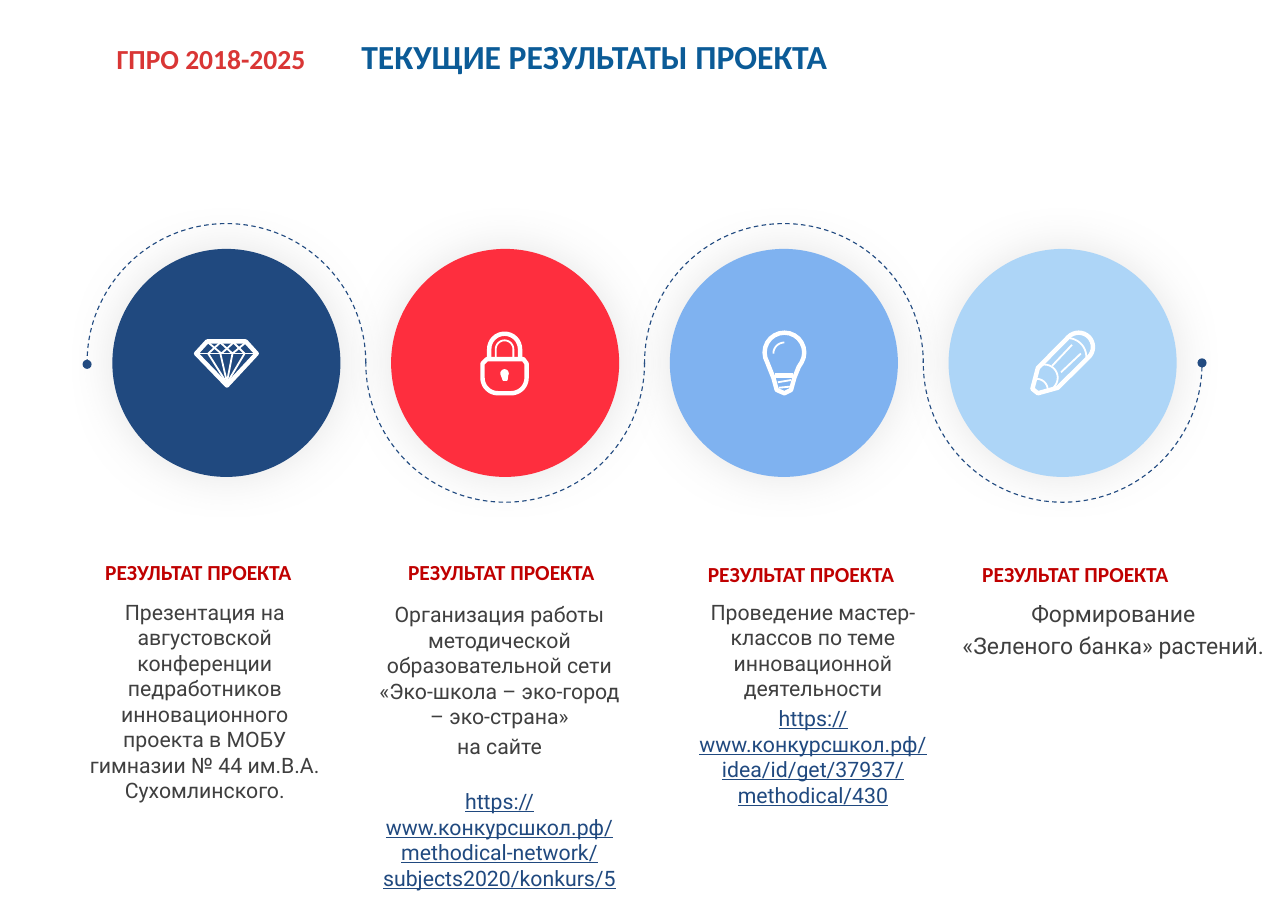
"""Build the slide of current project results."""
from dataclasses import dataclass
from math import cos, radians, sin

from lxml import etree
from pptx import Presentation
from pptx.dml.color import RGBColor
from pptx.enum.dml import MSO_LINE
from pptx.enum.shapes import MSO_SHAPE
from pptx.enum.text import MSO_ANCHOR, MSO_AUTO_SIZE, PP_ALIGN
from pptx.oxml.ns import qn
from pptx.util import Inches, Pt

ARC, OVAL = MSO_SHAPE.ARC, MSO_SHAPE.OVAL
DASH = MSO_LINE.DASH
LEFT, CENTER = PP_ALIGN.LEFT, PP_ALIGN.CENTER
TOP, MIDDLE = MSO_ANCHOR.TOP, MSO_ANCHOR.MIDDLE
GROW = MSO_AUTO_SIZE.SHAPE_TO_FIT_TEXT

WHITE = RGBColor(0xFF, 0xFF, 0xFF)
GREY = RGBColor(0x3F, 0x3F, 0x3F)
NAVY = RGBColor(0x20, 0x49, 0x7F)
WAVE = RGBColor(0x1D, 0x47, 0x7F)
RED = RGBColor(0xFE, 0x2E, 0x3E)
BLUE = RGBColor(0x7F, 0xB2, 0xF0)
PALE = RGBColor(0xAD, 0xD5, 0xF7)
CRIMSON = RGBColor(0xC0, 0x00, 0x00)
TAG = RGBColor(0xD9, 0x36, 0x35)
TITLE = RGBColor(0x0B, 0x5B, 0x97)

ARC_LEFT, ARC_TOP, ARC_SIZE = 0.79, 2.03, 2.53
DISC_SIZE = 2.07
INSET = (ARC_SIZE - DISC_SIZE) / 2
THICK, THIN = 2.9, 1.2

Box = tuple[float, float, float, float]
Points = list[tuple[float, float]]


@dataclass
class Line:
    """One paragraph of text."""
    text: str
    size: float
    color: RGBColor
    face: str = "Calibri"
    bold: bool = False
    link: bool = False
    before: float = 0
    indent: float = 0


@dataclass
class Stroke:
    """One white line of an icon."""
    points: Points
    width: float = THIN
    closed: bool = False
    solid: bool = False


@dataclass
class Result:
    """One column: disc, icon, heading and body."""
    color: RGBColor
    icon: list[Stroke]
    head: tuple[float, float]
    body: Box
    lines: list[Line]


def curve(x: float, y: float, r: float, start: int, end: int) -> Points:
    """Return points along a circle, clockwise from start to end."""
    turns = [radians(start + (end - start) * i / 16) for i in range(17)]
    return [(x + r * cos(t), y + r * sin(t)) for t in turns]


def body(text: str, size: float = 13.9, before: float = 0, link: bool = False) -> Line:
    """Return a paragraph in the style of the column bodies."""
    return Line(text, size, NAVY if link else GREY, "Roboto", link=link, before=before, indent=0.05)


GEM = [
    Stroke([(1.78, 3.21), (1.88, 3.1), (2.23, 3.1), (2.33, 3.21), (2.06, 3.5)], THICK, True),
    Stroke([(1.8, 3.21), (2.31, 3.21)]),
    Stroke([(1.89, 3.21), (2.06, 3.48), (2.22, 3.21)]),
    Stroke([(2, 3.21), (2.06, 3.47), (2.11, 3.21)]),
    Stroke([(1.89, 3.11), (2.01, 3.21), (2.12, 3.11), (2.22, 3.21)]),
    Stroke([(1.89, 3.21), (2, 3.11), (2.11, 3.21), (2.23, 3.11)]),
]
LOCK = [
    Stroke([(4.38, 3.3), (4.42, 3.26), (4.75, 3.26), (4.78, 3.3)]
           + curve(4.64, 3.43, 0.14, 0, 90) + curve(4.52, 3.43, 0.14, 90, 180), THICK, True),
    Stroke([(4.44, 3.26), *curve(4.58, 3.17, 0.14, 180, 360), (4.72, 3.26)], THICK),
    Stroke([(4.5, 3.25), *curve(4.58, 3.17, 0.08, 180, 360), (4.66, 3.25)]),
    Stroke([*curve(4.58, 3.39, 0.03, 150, 390), (4.6, 3.45), (4.57, 3.45)], THIN, True, True),
]
BULB = [
    Stroke([*curve(7.12, 3.2, 0.18, 150, 390), (7.25, 3.33), (7.21, 3.43), (7.18, 3.54),
            (7.12, 3.57), (7.05, 3.54), (7.02, 3.43), (6.98, 3.33)], THICK, True),
    Stroke([(7.03, 3.41), (7.2, 3.41)], THICK),
    Stroke([(7.06, 3.47), (7.18, 3.45)]),
    Stroke([(7.07, 3.52), (7.17, 3.51)]),
    Stroke(curve(7.12, 3.21, 0.1, 180, 270)),
]
PENCIL = [
    Stroke([(9.37, 3.53), (9.42, 3.34), *curve(9.79, 3.15, 0.13, 225, 405),
            (9.6, 3.52), (9.42, 3.57)], THICK, True),
    Stroke([(9.55, 3.32), (9.73, 3.13)]),
    Stroke([(9.63, 3.38), (9.81, 3.21)]),
    Stroke(curve(9.69, 3.24, 0.17, -90, 0)),
    Stroke(curve(9.48, 3.43, 0.12, -110, 45)),
    Stroke(curve(9.41, 3.54, 0.1, -90, 0)),
]

RESULTS = [
    Result(NAVY, GEM, (0.51, 5.03), (0.58, 5.39, 2.51, 1.65), [
        body("Презентация на августовской конференции педработников инновационного "
             "проекта в МОБУ гимназии № 44 им.В.А. Сухомлинского.")]),
    Result(RED, LOCK, (3.26, 5.03), (3.26, 5.41, 2.5, 2.54), [
        body("Организация работы методической образовательной сети "
             "«Эко-школа – эко-город – эко-страна»"),
        body("на сайте", before=2.8),
        body("https://www.конкурсшкол.рф/methodical-network/subjects2020/konkurs/5",
             before=19.5, link=True)]),
    Result(BLUE, BULB, (5.98, 5.04), (6.1, 5.39, 2.51, 1.65), [
        body("Проведение мастер-классов по теме инновационной деятельности"),
        body("https://www.конкурсшкол.рф/idea/id/get/37937/methodical/430",
             before=2.8, link=True)]),
    Result(PALE, PENCIL, (8.47, 5.04), (8.47, 5.39, 3.22, 1.65), [
        body("Формирование", 15),
        body("«Зеленого банка» растений.", 15, 3)]),
]


def write(shapes, box: Box, lines: list[Line], align=CENTER, anchor=TOP,
          wrap: bool = True, grow: bool = False) -> None:
    """Add a text box with its paragraphs."""
    frame = shapes.add_textbox(*map(Inches, box)).text_frame
    frame.word_wrap, frame.vertical_anchor = wrap, anchor
    frame.margin_left = frame.margin_right = Inches(0.11 if wrap else 0.1)
    if grow:
        frame.auto_size = GROW
    for i, line in enumerate(lines):
        para = frame.add_paragraph() if i else frame.paragraphs[0]
        para.text, para.alignment = line.text, align
        if line.indent:
            props = para._p.get_or_add_pPr()
            props.set("marL", str(Inches(line.indent)))
            props.set("indent", "0")
        if line.before:
            para.space_before = Pt(line.before)
        font = para.font
        font.name, font.size, font.bold = line.face, Pt(line.size), line.bold
        font.color.rgb, font.underline = line.color, line.link


def wave(shapes, i: int, last: int) -> None:
    """Add one half circle of the dashed wave."""
    arc = shapes.add_shape(ARC, Inches(ARC_LEFT + i * ARC_SIZE), Inches(ARC_TOP),
                           Inches(ARC_SIZE), Inches(ARC_SIZE))
    arc.adjustments[0], arc.adjustments[1] = 162, 54.351
    arc.rotation = 90 if i % 2 else 270
    if i % 2 == 0:
        arc._element.spPr.xfrm.set("flipV", "1")
    arc.shadow.inherit = False
    arc.fill.background()
    arc.line.color.rgb, arc.line.width, arc.line.dash_style = WAVE, Pt(0.75), DASH
    if i in (0, last):
        end = "a:headEnd" if i else "a:tailEnd"
        etree.SubElement(arc.line._get_or_add_ln(), qn(end), type="oval")


def disc(shapes, i: int, color: RGBColor) -> None:
    """Add a filled circle with a soft shadow."""
    oval = shapes.add_shape(OVAL, Inches(ARC_LEFT + i * ARC_SIZE + INSET),
                            Inches(ARC_TOP + INSET), Inches(DISC_SIZE), Inches(DISC_SIZE))
    oval.fill.solid()
    oval.fill.fore_color.rgb = color
    oval.line.fill.background()
    oval.shadow.inherit = False
    glow = etree.SubElement(oval._element.spPr.find(qn("a:effectLst")), qn("a:outerShdw"),
                            blurRad=str(Pt(30)), dist="0", dir="0", algn="ctr", rotWithShape="0")
    tint = etree.SubElement(glow, qn("a:srgbClr"), val="BFBFBF")
    etree.SubElement(tint, qn("a:alpha"), val="40000")


def draw(shapes, stroke: Stroke) -> None:
    """Add one line of an icon."""
    first, *rest = [(Inches(x), Inches(y)) for x, y in stroke.points]
    path = shapes.build_freeform(*first)
    path.add_line_segments(rest, close=stroke.closed)
    shape = path.convert_to_shape()
    shape.shadow.inherit = False
    if stroke.solid:
        shape.fill.solid()
        shape.fill.fore_color.rgb = WHITE
    else:
        shape.fill.background()
    shape.line.color.rgb, shape.line.width = WHITE, Pt(stroke.width)


def main() -> None:
    """Build and save the slide."""
    deck = Presentation()
    deck.slide_width, deck.slide_height = Inches(11.69), Inches(8.27)
    shapes = deck.slides.add_slide(deck.slide_layouts[6]).shapes
    write(shapes, (0.96, 0.33, 1.92, 0.4), [Line("ГПРО 2018-2025", 18, TAG, bold=True)],
          LEFT, wrap=False, grow=True)
    write(shapes, (3.17, 0, 8.35, 1.02),
          [Line("ТЕКУЩИЕ РЕЗУЛЬТАТЫ ПРОЕКТА", 22, TITLE, bold=True)], LEFT, MIDDLE)
    for i in range(len(RESULTS)):
        wave(shapes, i, len(RESULTS) - 1)
    for i, item in enumerate(RESULTS):
        disc(shapes, i, item.color)
        for stroke in item.icon:
            draw(shapes, stroke)
        write(shapes, (*item.head, 2.58, 0.35),
              [Line("РЕЗУЛЬТАТ ПРОЕКТА", 14, CRIMSON, bold=True)], grow=True)
        write(shapes, item.body, item.lines)
    deck.save("out.pptx")


if __name__ == "__main__":
    main()
